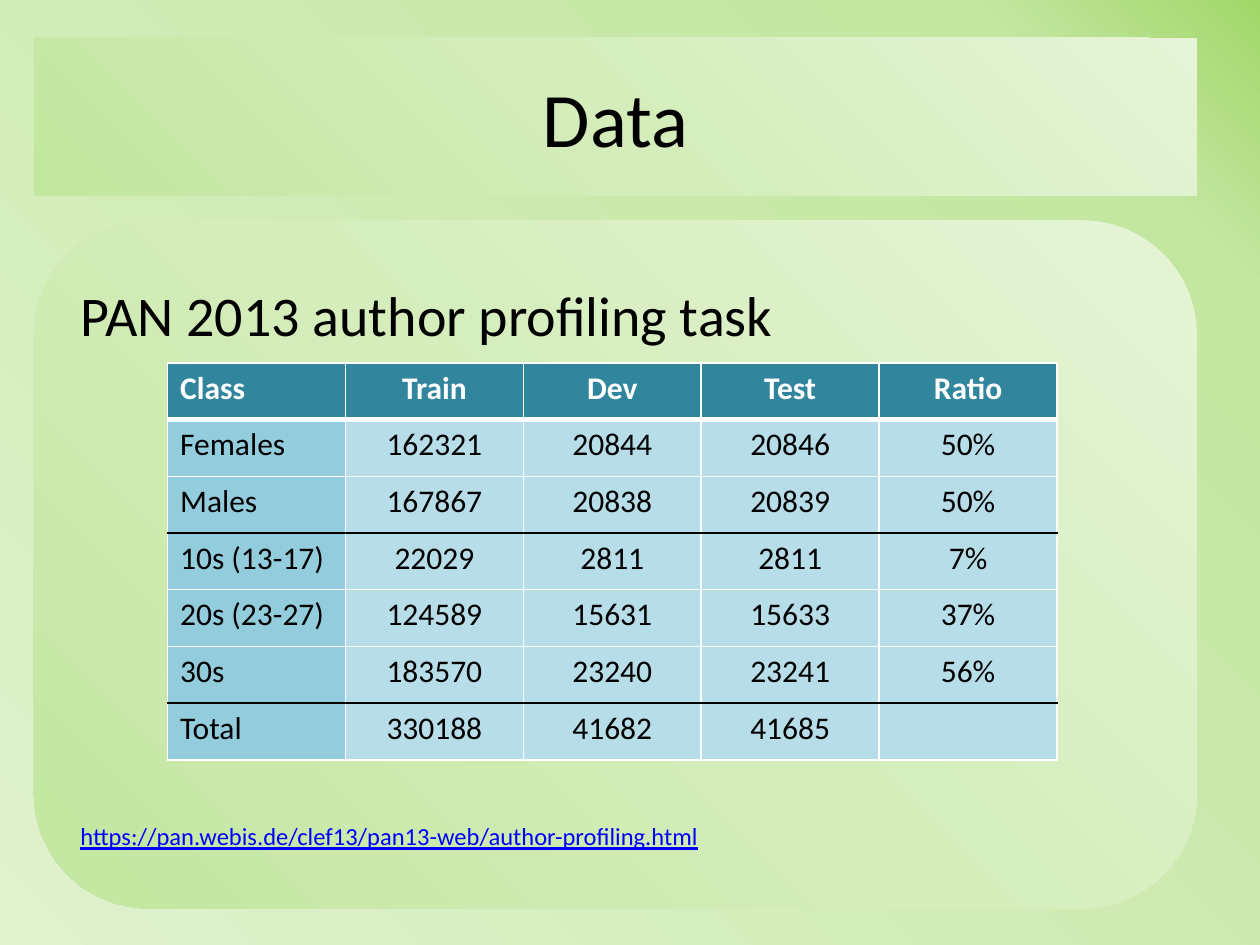
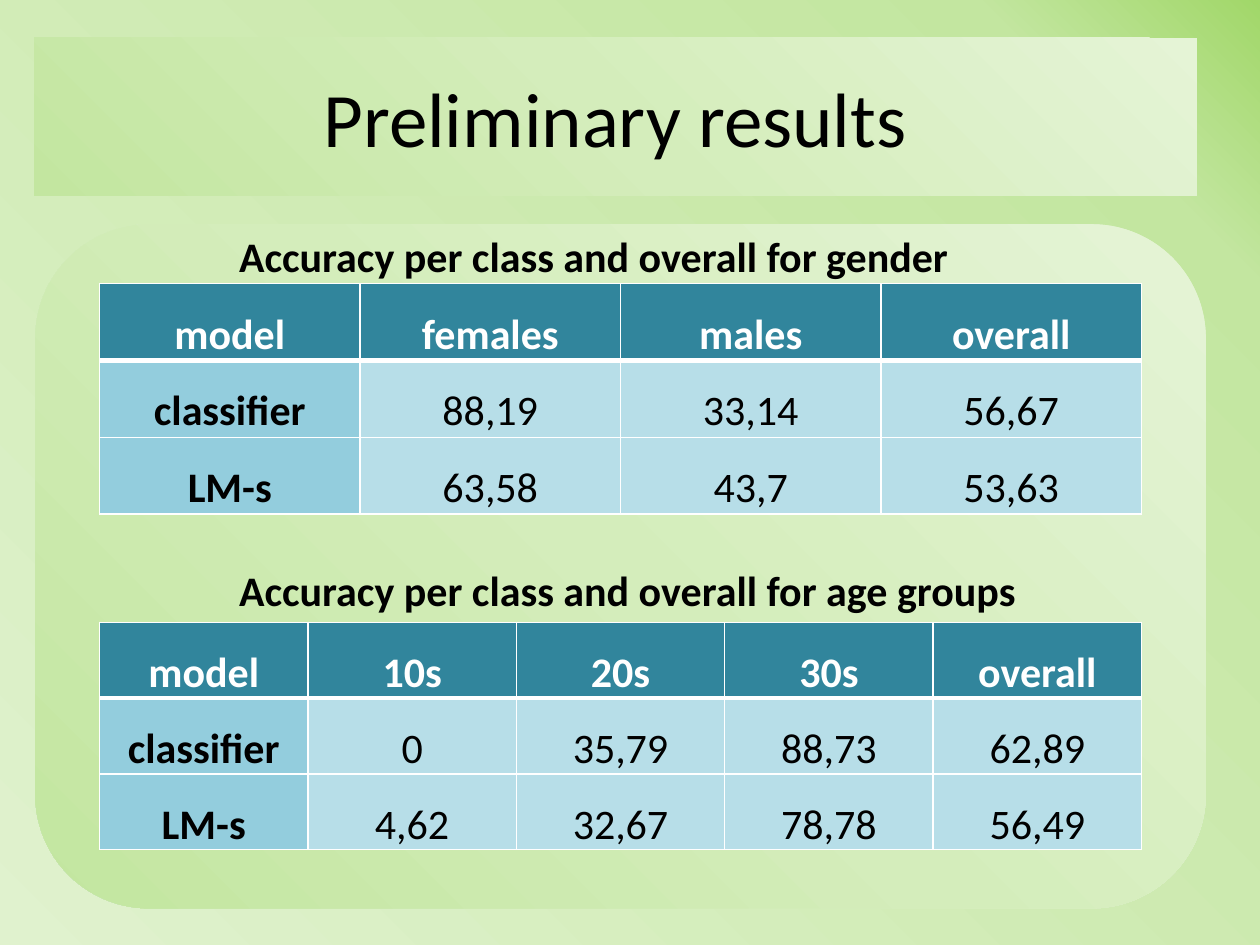
"""Build two slides on author profiling: the data and the preliminary results."""
from lxml.etree import SubElement
from pptx import Presentation
from pptx.dml.color import RGBColor
from pptx.enum.shapes import MSO_SHAPE
from pptx.enum.text import MSO_ANCHOR as ANCHOR, PP_ALIGN as ALIGN
from pptx.oxml.ns import qn
from pptx.util import Inches, Pt

FONT = "Calibri"
COLORS = {
    "black": "000000",
    "white": "FFFFFF",
    "link": "0000FF",
    "header": "31859C",
    "first_column": "93CDDD",
    "body": "B7DEE8",
}
BACKGROUND = [(0, "E0F2CE"), (87, "C3E6A0"), (100, "A1D769")]
PANEL = [(0, "E5F4D6"), (50, "D4EDBB"), (100, "C3E6A0")]

DATA = [
    ["Class", "Train", "Dev", "Test", "Ratio"],
    ["Females", "162321", "20844", "20846", "50%"],
    ["Males", "167867", "20838", "20839", "50%"],
    ["10s (13-17)", "22029", "2811", "2811", "7%"],
    ["20s (23-27)", "124589", "15631", "15633", "37%"],
    ["30s", "183570", "23240", "23241", "56%"],
    ["Total", "330188", "41682", "41685", ""],
]
GENDER = [
    ["model", "females", "males", "overall"],
    ["classifier", "88,19", "33,14", "56,67"],
    ["LM-s", "63,58", "43,7", "53,63"],
]
AGE = [
    ["model", "10s", "20s", "30s", "overall"],
    ["classifier", "0", "35,79", "88,73", "62,89"],
    ["LM-s", "4,62", "32,67", "78,78", "56,49"],
]


def color(name):
    return RGBColor.from_string(COLORS[name])


class Deck:
    def __init__(self):
        self.prs = Presentation()
        self.prs.slide_width, self.prs.slide_height = Inches(10), Inches(7.5)
        self.slide = None
        master = self.prs.slide_master
        self.gradient(master.background.fill, master.element, BACKGROUND, 45)

    def gradient(self, fill, element, stops, angle):
        fill.gradient()
        fill.gradient_angle = angle
        gs_list = element.find(".//" + qn("a:gsLst"))
        for gs in list(gs_list):
            gs_list.remove(gs)
        for position, value in stops:
            gs = SubElement(gs_list, qn("a:gs"), pos=str(position * 1000))
            SubElement(gs, qn("a:srgbClr"), val=value)

    def place(self, sp, left, top, width, height):
        sp.left, sp.top = Inches(left), Inches(top)
        sp.width, sp.height = Inches(width), Inches(height)

    def style(self, p, size, name="black", bold=False):
        p.font.name, p.font.size, p.font.bold = FONT, Pt(size), bold
        p.font.color.rgb = color(name)

    def add_slide(self, title):
        self.slide = self.prs.slides.add_slide(self.prs.slide_layouts[5])
        sp = self.slide.shapes.title
        self.place(sp, 0.27, 0.3, 9.23, 1.25)
        self.gradient(sp.fill, sp.element, PANEL, 225)
        tf = sp.text_frame
        tf.text, tf.vertical_anchor = title, ANCHOR.MIDDLE
        p = tf.paragraphs[0]
        p.alignment = ALIGN.CENTER
        self.style(p, 44)

    def panel(self, left, top, width, height):
        sp = self.slide.shapes.add_shape(
            MSO_SHAPE.ROUNDED_RECTANGLE,
            Inches(left), Inches(top), Inches(width), Inches(height))
        sp.shadow.inherit = False
        sp.line.fill.background()
        self.gradient(sp.fill, sp.element, PANEL, 225)

    def text(self, text, left, top, width, height, size, name="black", bold=False):
        sp = self.slide.shapes.add_textbox(
            Inches(left), Inches(top), Inches(width), Inches(height))
        tf = sp.text_frame
        tf.text, tf.word_wrap = text, True
        p = tf.paragraphs[0]
        self.style(p, size, name, bold)
        p.font.underline = name == "link"

    def border(self, cell, top, bottom, bottom_width):
        sides = [("L", "white", 1), ("R", "white", 1),
                 ("T", top, 1), ("B", bottom, bottom_width)]
        tc_pr = cell._tc.get_or_add_tcPr()
        for i, (side, name, width) in enumerate(sides):
            ln = SubElement(tc_pr, qn("a:ln" + side), w=str(Pt(width)))
            fill = SubElement(ln, qn("a:solidFill"))
            SubElement(fill, qn("a:srgbClr"), val=COLORS[name])
            tc_pr.insert(i, ln)

    def table(self, rows, left, top, width, row_height, size,
              rules_below=(), spaced=False):
        table = self.slide.shapes.add_table(
            len(rows), len(rows[0]), Inches(left), Inches(top),
            Inches(width), Inches(row_height * len(rows))).table
        table.horz_banding = False
        for r, row in enumerate(rows):
            for c, value in enumerate(row):
                cell = table.cell(r, c)
                head = r == 0
                fill = "header" if head else "body" if c else "first_column"
                cell.fill.solid()
                cell.fill.fore_color.rgb = color(fill)
                self.border(cell, "black" if r - 1 in rules_below else "white",
                            "black" if r in rules_below else "white",
                            3 if head else 1)
                cell.text = value
                p = cell.text_frame.paragraphs[0]
                self.style(p, size, "white" if head else "black",
                           head or (spaced and c == 0))
                p.alignment = ALIGN.CENTER if c or spaced else ALIGN.LEFT
                if spaced:
                    cell.vertical_anchor = ANCHOR.MIDDLE
                    cell.margin_left = cell.margin_right = Inches(0.07)
                    cell.margin_top = cell.margin_bottom = 0
                    p.line_spacing, p.space_after = 1.5, Pt(6)


def main():
    deck = Deck()

    deck.add_slide("Data")
    deck.panel(0.27, 1.75, 9.23, 5.46)
    deck.text("PAN 2013 author profiling task", 0.54, 2.18, 8.6, 0.64, 32)
    deck.table(DATA, 1.33, 2.88, 7.06, 0.45, 18, rules_below=(2, 5))
    deck.text("https://pan.webis.de/clef13/pan13-web/author-profiling.html",
              0.54, 6.47, 8.6, 0.34, 14, "link")

    deck.add_slide("Preliminary results")
    deck.panel(0.28, 1.78, 9.29, 5.43)
    for topic, rows, text_top, table_top in (("gender", GENDER, 1.78, 2.25),
                                             ("age groups", AGE, 4.43, 4.94)):
        deck.table(rows, 0.79, table_top, 8.27, 0.6, 24, spaced=True)
        deck.text(f"Accuracy per class and overall for {topic}",
                  1.8, text_top, 6.6, 0.5, 24, bold=True)

    deck.prs.save("out.pptx")


if __name__ == "__main__":
    main()
